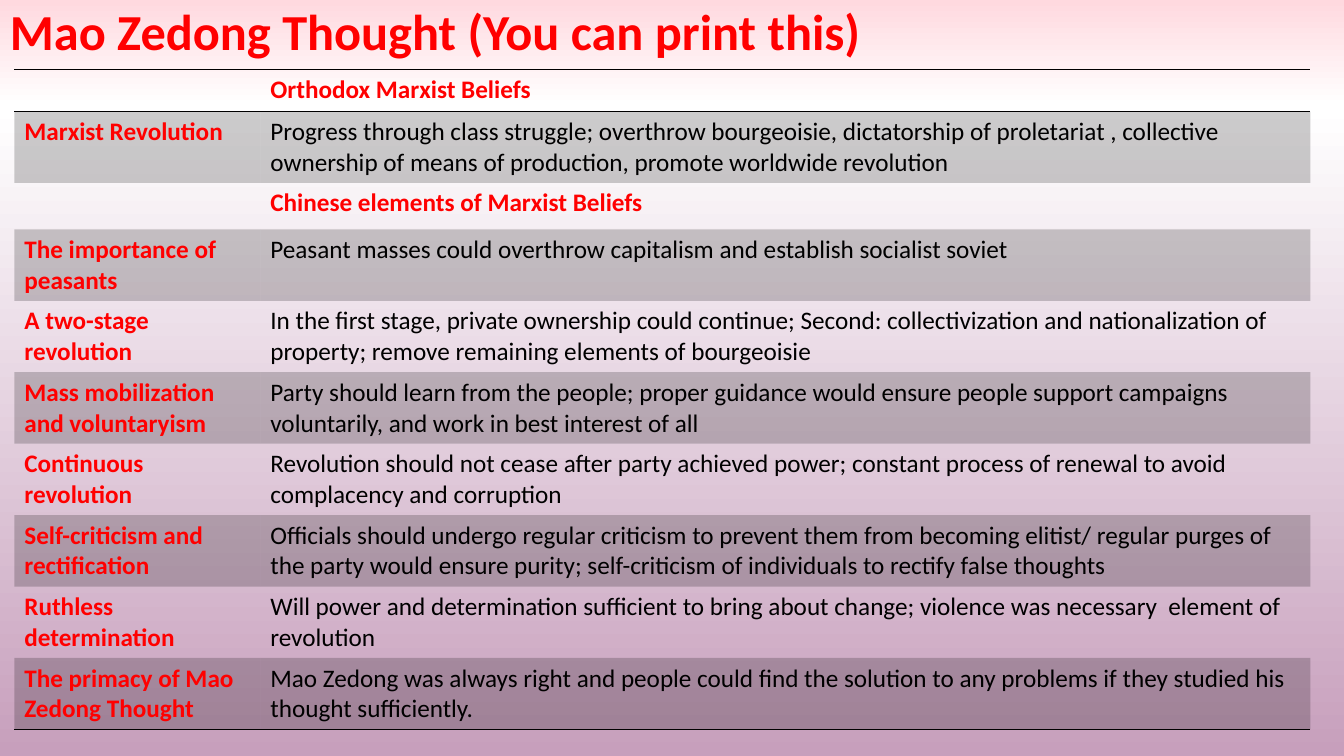
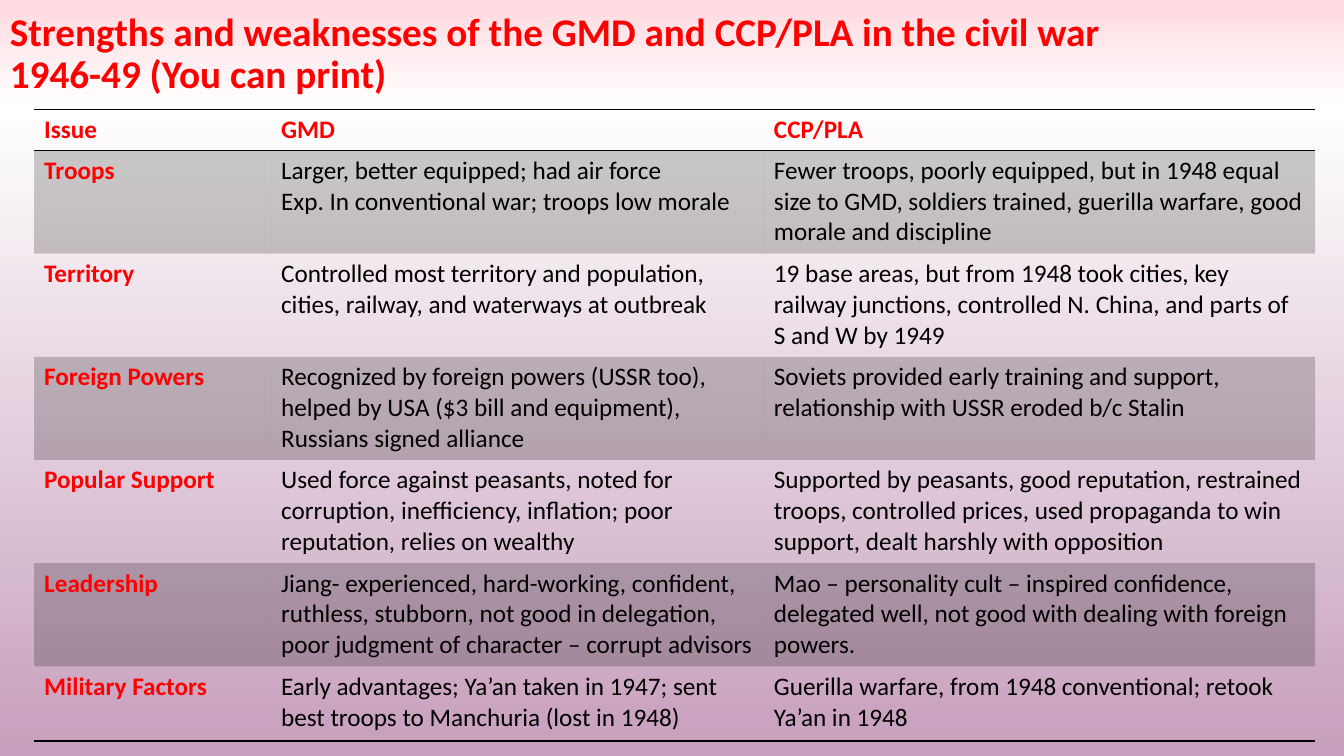
from copy import deepcopy

from lxml import etree
from pptx import Presentation
from pptx import util as u
from pptx.dml import color
from pptx.enum import text
from pptx.oxml import ns

RED, BLACK = "FF0000", "000000"
BACKDROP = [(0, "FFD9DF"), (0.14, "FFFFFF"), (1, "C79FBC")]
FONT = "Calibri"
PLAIN_TABLE = "{2D5ABB26-0587-4C30-8999-92F81FD0307C}"
TITLE_WIDTH = 29.21

BELIEFS = [
    ("", "Orthodox Marxist Beliefs"),
    ("Marxist Revolution", "Progress through class struggle; overthrow bourgeoisie, dictatorship of proletariat , collective ownership of means of production, promote worldwide revolution"),
    ("", "Chinese elements of Marxist Beliefs"),
    ("The importance of peasants", "Peasant masses could overthrow capitalism and establish socialist soviet"),
    ("A two-stage revolution", "In the first stage, private ownership could continue; Second: collectivization and nationalization of property; remove remaining elements of bourgeoisie"),
    ("Mass mobilization and voluntaryism", "Party should learn from the people; proper guidance would ensure people support campaigns voluntarily, and work in best interest of all"),
    ("Continuous revolution", "Revolution should not cease after party achieved power; constant process of renewal to avoid complacency and corruption"),
    ("Self-criticism and rectification", "Officials should undergo regular criticism to prevent them from becoming elitist/ regular purges of the party would ensure purity; self-criticism of individuals to rectify false thoughts"),
    ("Ruthless determination", "Will power and determination sufficient to bring about change; violence was necessary  element of revolution"),
    ("The primacy of Mao Zedong Thought", "Mao Zedong was always right and people could find the solution to any problems if they studied his thought sufficiently."),
]

CIVIL_WAR = [
    ("Issue", "GMD", "CCP/PLA"),
    ("Troops", "Larger, better equipped; had air force\nExp. In conventional war; troops low morale", "Fewer troops, poorly equipped, but in 1948 equal size to GMD, soldiers trained, guerilla warfare, good morale and discipline"),
    ("Territory", "Controlled most territory and population, cities, railway, and waterways at outbreak", "19 base areas, but from 1948 took cities, key railway junctions, controlled N. China, and parts of S and W by 1949"),
    ("Foreign Powers", "Recognized by foreign powers (USSR too), helped by USA ($3 bill and equipment), Russians signed alliance", "Soviets provided early training and support, relationship with USSR eroded b/c Stalin"),
    ("Popular Support", "Used force against peasants, noted for corruption, inefficiency, inflation; poor reputation, relies on wealthy", "Supported by peasants, good reputation, restrained troops, controlled prices, used propaganda to win support, dealt harshly with opposition"),
    ("Leadership", "Jiang- experienced, hard-working, confident, ruthless, stubborn, not good in delegation, poor judgment of character – corrupt advisors", "Mao – personality cult – inspired confidence, delegated well, not good with dealing with foreign powers."),
    ("Military Factors", "Early advantages; Ya’an taken in 1947; sent best troops to Manchuria (lost in 1948)", "Guerilla warfare, from 1948 conventional; retook Ya’an in 1948"),
]


def rgb(value):
    """Turn a hex string into a colour."""
    return color.RGBColor.from_string(value)


def write(frame, wording, size=18, hue=BLACK, bold=False, spacing=None):
    """Fill a text frame, one paragraph for each line of the wording."""
    frame.text = wording
    for paragraph in frame.paragraphs:
        if spacing:
            paragraph.line_spacing = spacing
        font = paragraph.font
        for run in paragraph.runs:
            font = run.font
            font.color.rgb = rgb(hue)
            font.bold = bold
        font.name, font.size = FONT, u.Pt(size)


def paint_backdrop(master):
    """Give the slide master the vertical gradient that all slides share."""
    fill = master.background.fill
    fill.gradient()
    fill.gradient_angle = 270
    stop_list = master.element.find(".//" + ns.qn("a:gsLst"))
    stop_list.append(deepcopy(stop_list[0]))
    for stop, (position, hue) in zip(fill.gradient_stops, BACKDROP):
        stop.position = position
        stop.color.rgb = rgb(hue)


def shade(cell):
    """Lay a translucent black band over a cell."""
    cell.fill.solid()
    cell.fill.fore_color.rgb = rgb(BLACK)
    tint = cell._tc.tcPr.find(".//" + ns.qn("a:srgbClr"))
    etree.SubElement(tint, ns.qn("a:alpha"), val="20000")


def rule_off(cell, sides):
    """Draw black rules on the given sides of a cell, top before bottom."""
    properties = cell._tc.get_or_add_tcPr()
    for index, side in enumerate(sides):
        line = etree.Element(ns.qn("a:ln" + side), w=str(u.Pt(1)))
        solid = etree.SubElement(line, ns.qn("a:solidFill"))
        etree.SubElement(solid, ns.qn("a:srgbClr"), val=BLACK)
        properties.insert(index, line)


def add_title(slide, wording, height, size):
    """Place the red heading at the top left of the slide."""
    heading = slide.shapes.add_textbox(0, 0, u.Cm(TITLE_WIDTH), u.Cm(height))
    heading.text_frame.word_wrap = True
    heading.text_frame.vertical_anchor = text.MSO_ANCHOR.MIDDLE
    write(heading.text_frame, wording, size=size, hue=RED, bold=True, spacing=0.9)


def add_grid(slide, left, top, widths, heights, rows):
    """Place a banded table with red headings and rules above and below."""
    box = [u.Cm(n) for n in (left, top, sum(widths), sum(heights))]
    frame = slide.shapes.add_table(len(rows), len(widths), *box)
    grid = frame.table
    grid.first_row = grid.horz_banding = False
    frame._element.find(".//" + ns.qn("a:tableStyleId")).text = PLAIN_TABLE
    for column, width in zip(grid.columns, widths):
        column.width = u.Cm(width)
    for r, (entries, height) in enumerate(zip(rows, heights)):
        grid.rows[r].height = u.Cm(height)
        is_heading = r == 0 or not entries[0]
        for c, wording in enumerate(entries):
            cell = grid.cell(r, c)
            strong = is_heading or c == 0
            write(cell.text_frame, wording, hue=RED if strong else BLACK, bold=strong)
            if r % 2:
                shade(cell)
            else:
                cell.fill.background()
            if r == 0:
                rule_off(cell, "TB")
            elif r == len(rows) - 1:
                rule_off(cell, "B")


def add_table_slide(deck, title, title_height, title_size, left, widths, heights, rows):
    """Add a slide whose table starts right below its heading."""
    slide = deck.slides.add_slide(deck.slide_layouts[6])
    add_title(slide, title, title_height, title_size)
    add_grid(slide, left, title_height, widths, heights, rows)


def main():
    """Build and save the two slides."""
    deck = Presentation()
    deck.slide_width, deck.slide_height = u.Cm(33.87), u.Cm(19.05)
    paint_backdrop(deck.slide_master)
    add_table_slide(deck, "Mao Zedong Thought (You can print this)", 1.75, 36, 0.36,
                    [6.2, 26.46], [1.06, 1.8, 1.17] + [1.8] * 7, BELIEFS)
    add_table_slide(deck, "Strengths and weaknesses of the GMD and CCP/PLA in the civil war 1946-49 (You can print)",
                    2.75, 28, 0.86, [5.97, 12.42, 13.89], [1.04] + [2.6] * 5 + [1.88], CIVIL_WAR)
    deck.save("out.pptx")


if __name__ == "__main__":
    main()
